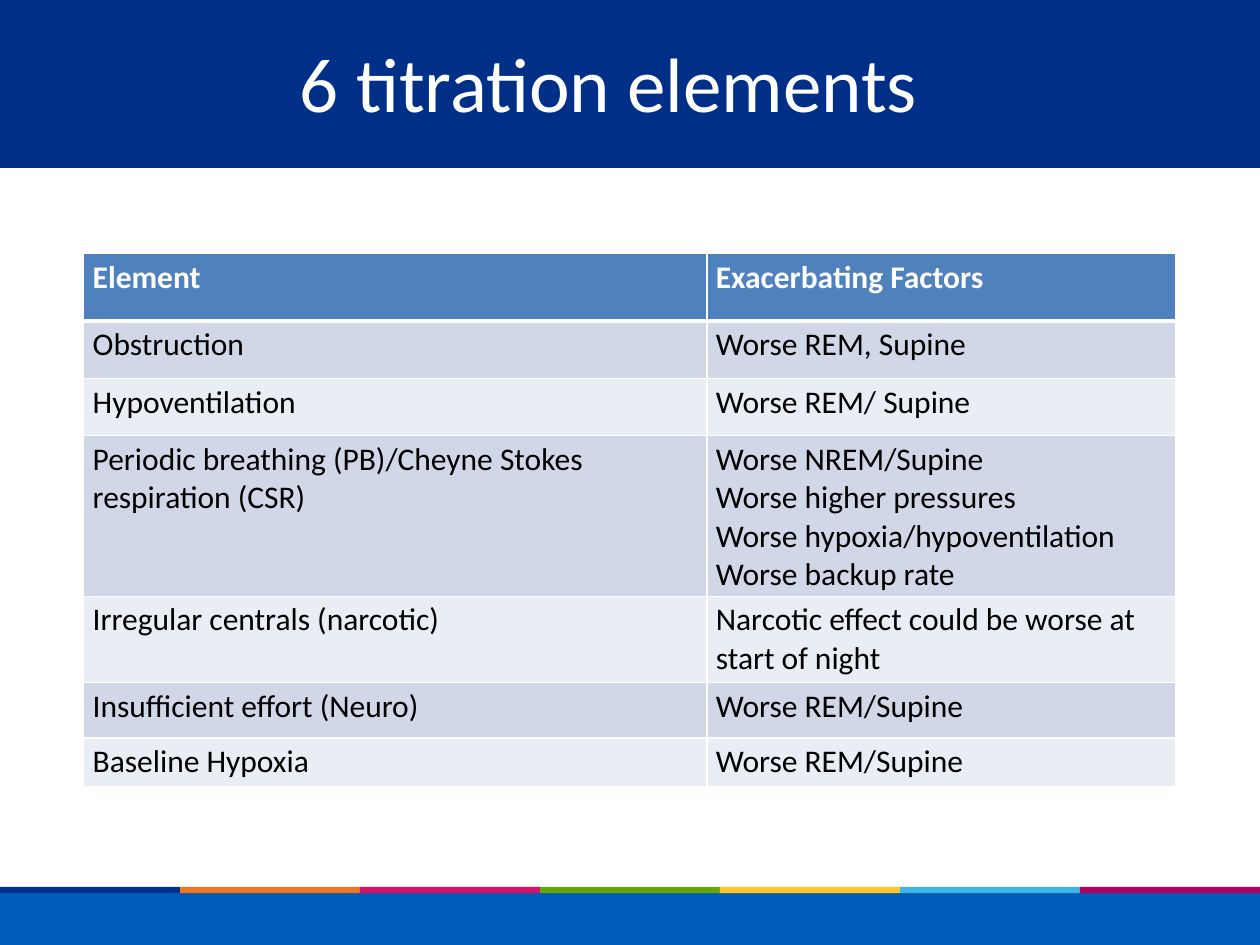
from lxml import etree
from pptx import Presentation
from pptx.dml.color import RGBColor
from pptx.enum import shapes, text
from pptx.oxml import ns
from pptx.util import Pt

WHITE = RGBColor(0xFF, 0xFF, 0xFF)
BLACK = RGBColor(0x00, 0x00, 0x00)
NAVY = RGBColor(0x00, 0x2F, 0x87)
FOOTER_BLUE = RGBColor(0x00, 0x5C, 0xB9)
HEADER_BLUE = RGBColor(0x4F, 0x81, 0xBD)
BANDS = [RGBColor(0xE9, 0xED, 0xF4), RGBColor(0xD0, 0xD8, 0xE8)]
STRIPES = [
    NAVY,
    RGBColor(0xEF, 0x76, 0x22),
    RGBColor(0xD5, 0x10, 0x67),
    RGBColor(0x63, 0xA7, 0x0A),
    RGBColor(0xFF, 0xC6, 0x27),
    RGBColor(0x40, 0xB4, 0xE5),
    RGBColor(0xB0, 0x00, 0x60),
]
FONT = "Calibri"
SLIDE_W, SLIDE_H = 720, 540

TITLE = "6 titration elements"
ROWS = [
    ("Element", "Exacerbating Factors"),
    ("Obstruction", "Worse REM, Supine"),
    ("Hypoventilation", "Worse REM/ Supine"),
    ("Periodic breathing (PB)/Cheyne Stokes respiration (CSR)",
     "Worse NREM/Supine\nWorse higher pressures\n"
     "Worse hypoxia/hypoventilation\nWorse backup rate"),
    ("Irregular centrals (narcotic)",
     "Narcotic effect could be worse at start of night"),
    ("Insufficient effort (Neuro)", "Worse REM/Supine"),
    ("Baseline Hypoxia", "Worse REM/Supine"),
]
COL_WIDTHS = [356.1, 267.9]
ROW_HEIGHTS = [38.6, 32.8, 32.7, 91.8, 49.3, 31.6, 28.2]


def add_bar(s, left, top, width, height, color):
    sp = s.shapes.add_shape(shapes.MSO_SHAPE.RECTANGLE,
                            Pt(left), Pt(top), Pt(width), Pt(height))
    sp.shadow.inherit = False
    sp.fill.solid()
    sp.fill.fore_color.rgb = color
    sp.line.fill.background()


def style_text(tf, size, color, bold=False):
    for p in tf.paragraphs:
        for r in p.runs:
            r.font.name = FONT
            r.font.size = Pt(size)
            r.font.bold = bold
            r.font.color.rgb = color


def set_borders(cell, **widths):
    """Draw white borders; widths maps L, R, T and B to points."""
    tc_pr = cell._tc.get_or_add_tcPr()
    for side in "LRTB":
        ln = etree.SubElement(tc_pr, ns.qn(f"a:ln{side}"),
                              w=str(Pt(widths.get(side, 1))))
        fill = etree.SubElement(ln, ns.qn("a:solidFill"))
        etree.SubElement(fill, ns.qn("a:srgbClr"), val=str(WHITE))


def add_title(s):
    tf = s.shapes.add_textbox(Pt(24), Pt(9.5), Pt(648), Pt(74)).text_frame
    tf.word_wrap = True
    tf.vertical_anchor = text.MSO_ANCHOR.MIDDLE
    tf.text = TITLE
    tf.paragraphs[0].alignment = text.PP_ALIGN.CENTER
    style_text(tf, 44, WHITE)


def add_elements_table(s):
    table = s.shapes.add_table(len(ROWS), len(COL_WIDTHS), Pt(47.8), Pt(144.9),
                               Pt(sum(COL_WIDTHS)), Pt(sum(ROW_HEIGHTS))).table
    for column, width in zip(table.columns, COL_WIDTHS):
        column.width = Pt(width)
    for i, (row, height) in enumerate(zip(ROWS, ROW_HEIGHTS)):
        table.rows[i].height = Pt(height)
        header = i == 0
        for j, words in enumerate(row):
            cell = table.cell(i, j)
            cell.margin_left = cell.margin_right = Pt(5.2)
            cell.margin_top = cell.margin_bottom = Pt(2.6)
            cell.text_frame.text = words
            style_text(cell.text_frame, 18, WHITE if header else BLACK, header)
            set_borders(cell, T=3 if i == 1 else 1, B=3 if header else 1)
            cell.fill.solid()
            cell.fill.fore_color.rgb = HEADER_BLUE if header else BANDS[i % 2]


def main():
    prs = Presentation()
    prs.slide_width, prs.slide_height = Pt(SLIDE_W), Pt(SLIDE_H)
    s = prs.slides.add_slide(prs.slide_layouts[6])
    add_bar(s, 0, 510, SLIDE_W, 30, FOOTER_BLUE)
    stripe_w = SLIDE_W / len(STRIPES)
    for i, color in enumerate(STRIPES):
        add_bar(s, i * stripe_w, 506.8, stripe_w, 3.6, color)
    add_bar(s, 0, 0, SLIDE_W, 96, NAVY)
    add_title(s)
    add_elements_table(s)
    prs.save("out.pptx")


if __name__ == "__main__":
    main()
